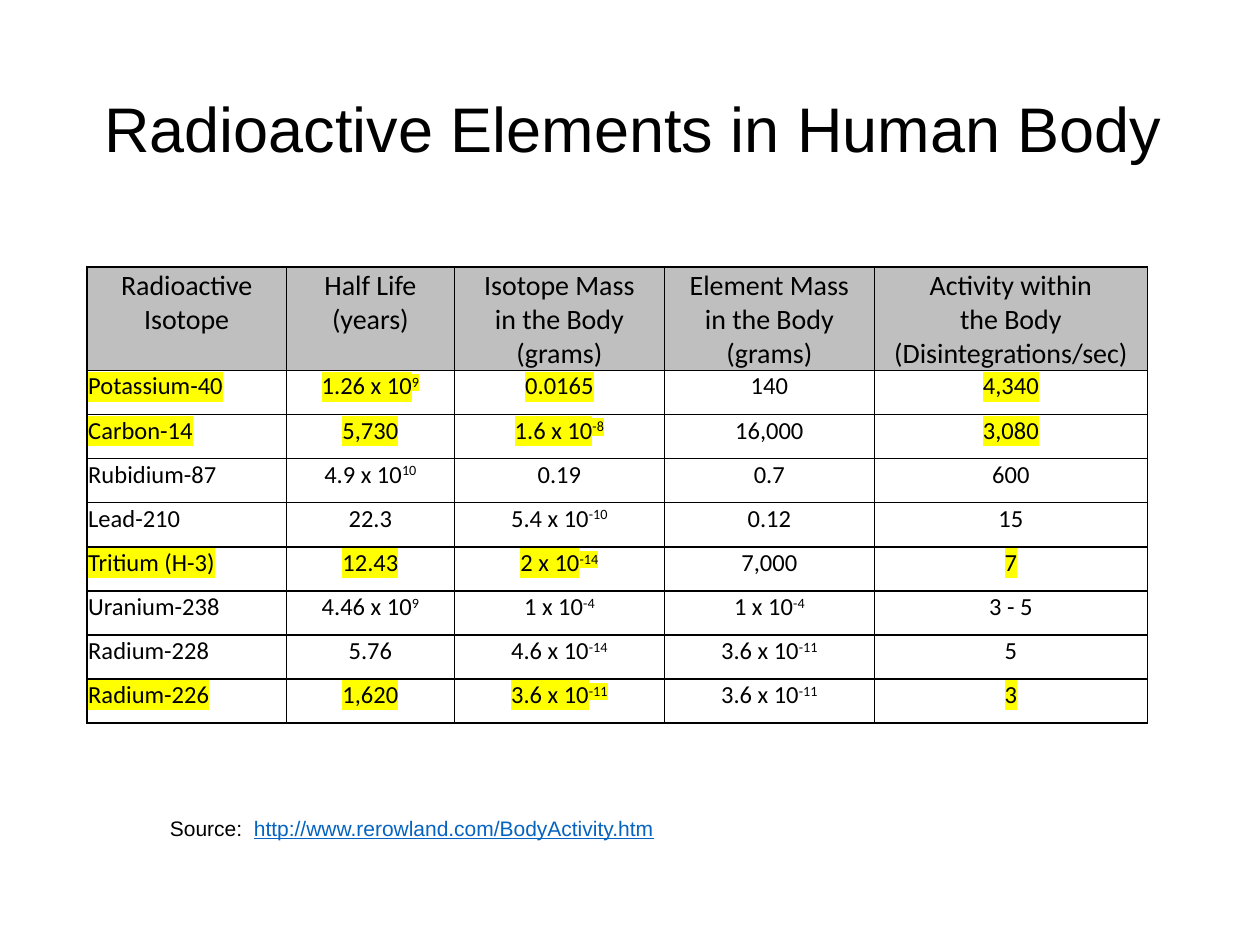
from lxml import etree
from pptx import Presentation
from pptx.dml.color import RGBColor
from pptx.enum.text import MSO_ANCHOR, PP_ALIGN
from pptx.oxml.ns import qn
from pptx.util import Inches, Pt

LEFT, CENTER = PP_ALIGN.LEFT, PP_ALIGN.CENTER
MIDDLE = MSO_ANCHOR.MIDDLE
COLORS = {"text": "000000", "header": "BFBFBF", "mark": "FFFF00", "link": "0563C1"}

HEADERS = ["Radioactive\nIsotope", "Half Life\n(years)",
           "Isotope Mass\nin the Body\n(grams)",
           "Element Mass\nin the Body\n(grams)",
           "Activity within\nthe Body\n(Disintegrations/sec)"]
# A caret starts an exponent
ISOTOPES = [
    ["Potassium-40", "1.26 x 10^9", "0.0165", "140", "4,340"],
    ["Carbon-14", "5,730", "1.6 x 10^-8", "16,000", "3,080"],
    ["Rubidium-87", "4.9 x 10^10", "0.19", "0.7", "600"],
    ["Lead-210", "22.3", "5.4 x 10^-10", "0.12", "15"],
    ["Tritium (H-3)", "12.43", "2 x 10^-14", "7,000", "7"],
    ["Uranium-238", "4.46 x 10^9", "1 x 10^-4", "1 x 10^-4", "3 - 5"],
    ["Radium-228", "5.76", "4.6 x 10^-14", "3.6 x 10^-11", "5"],
    ["Radium-226", "1,620", "3.6 x 10^-11", "3.6 x 10^-11", "3"],
]
MARKED = {"Potassium-40", "Carbon-14", "Tritium (H-3)", "Radium-226"}
ELEMENT_MASS = 3
TWELFTHS = [19, 16, 20, 20, 26]  # column widths in twelfths of an inch
HEADER_HEIGHT, ROW_HEIGHT = 0.72, 0.35


def add_span(para, text, size, font="Arial", color="text", marked=False):
    span = para.add_run()
    span.text = text
    span.font.size = Pt(size)
    span.font.color.rgb = RGBColor.from_string(COLORS[color])
    if marked:
        highlight = etree.SubElement(span.font._element, qn("a:highlight"))
        etree.SubElement(highlight, qn("a:srgbClr"), val=COLORS["mark"])
    span.font.name = font
    return span


def add_borders(cell):
    properties = cell._tc.get_or_add_tcPr()
    for index, side in enumerate(["lnL", "lnR", "lnT", "lnB"]):
        line = etree.Element(qn(f"a:{side}"), w=str(Pt(1)))
        fill = etree.SubElement(line, qn("a:solidFill"))
        etree.SubElement(fill, qn("a:srgbClr"), val=COLORS["text"])
        properties.insert(index, line)


deck = Presentation()
deck.slide_width, deck.slide_height = Inches(10), Inches(7.5)
page = deck.slides.add_slide(deck.slide_layouts[6])

# Title
box = page.shapes.add_textbox(Inches(0.73), Inches(0.64), Inches(8.62), Inches(0.81))
frame = box.text_frame
frame.word_wrap = True
frame.margin_right = 0
frame.vertical_anchor = MIDDLE
frame.paragraphs[0].line_spacing = 0.9
add_span(frame.paragraphs[0], "Radioactive Elements in Human Body", 36)

# Table grid
rows = [HEADERS] + ISOTOPES
table = page.shapes.add_table(
    len(rows), len(HEADERS), Inches(0.69), Inches(2.12),
    Inches(sum(TWELFTHS) / 12),
    Inches(HEADER_HEIGHT + ROW_HEIGHT * len(ISOTOPES))).table
table.first_row = table.horz_banding = False
for column, width in zip(table.columns, TWELFTHS):
    column.width = Inches(width / 12)
for number, row in enumerate(table.rows):
    row.height = Inches(ROW_HEIGHT if number else HEADER_HEIGHT)

# Table cells
for r, values in enumerate(rows):
    for c, value in enumerate(values):
        cell = table.cell(r, c)
        cell.margin_left = cell.margin_right = Inches(0.01)
        cell.margin_top = cell.margin_bottom = Inches(0.01)
        para = cell.text_frame.paragraphs[0]
        para.alignment = LEFT if r and c == 0 else CENTER
        para.space_after = Pt(6)
        if r == 0:
            cell.fill.solid()
            cell.fill.fore_color.rgb = RGBColor.from_string(COLORS["header"])
            for number, line in enumerate(value.split("\n")):
                if number:
                    para.add_line_break()
                add_span(para, line, 16, "Calibri")
        else:
            cell.fill.background()
            marked = values[0] in MARKED and c != ELEMENT_MASS
            base, _, exponent = value.partition("^")
            add_span(para, base, 14, "Calibri", marked=marked)
            if exponent:
                span = add_span(para, exponent, 14, "Calibri", marked=marked)
                span.font._element.set("baseline", "30000")
        add_borders(cell)

# Source line
box = page.shapes.add_textbox(Inches(1.25), Inches(6.42), Inches(4.08), Inches(0.3))
box.text_frame.word_wrap = False
para = box.text_frame.paragraphs[0]
add_span(para, "Source:  ", 12)
address = add_span(para, "http://www.rerowland.com/BodyActivity.htm", 12, color="link")
address.font.underline = True

deck.save("out.pptx")
